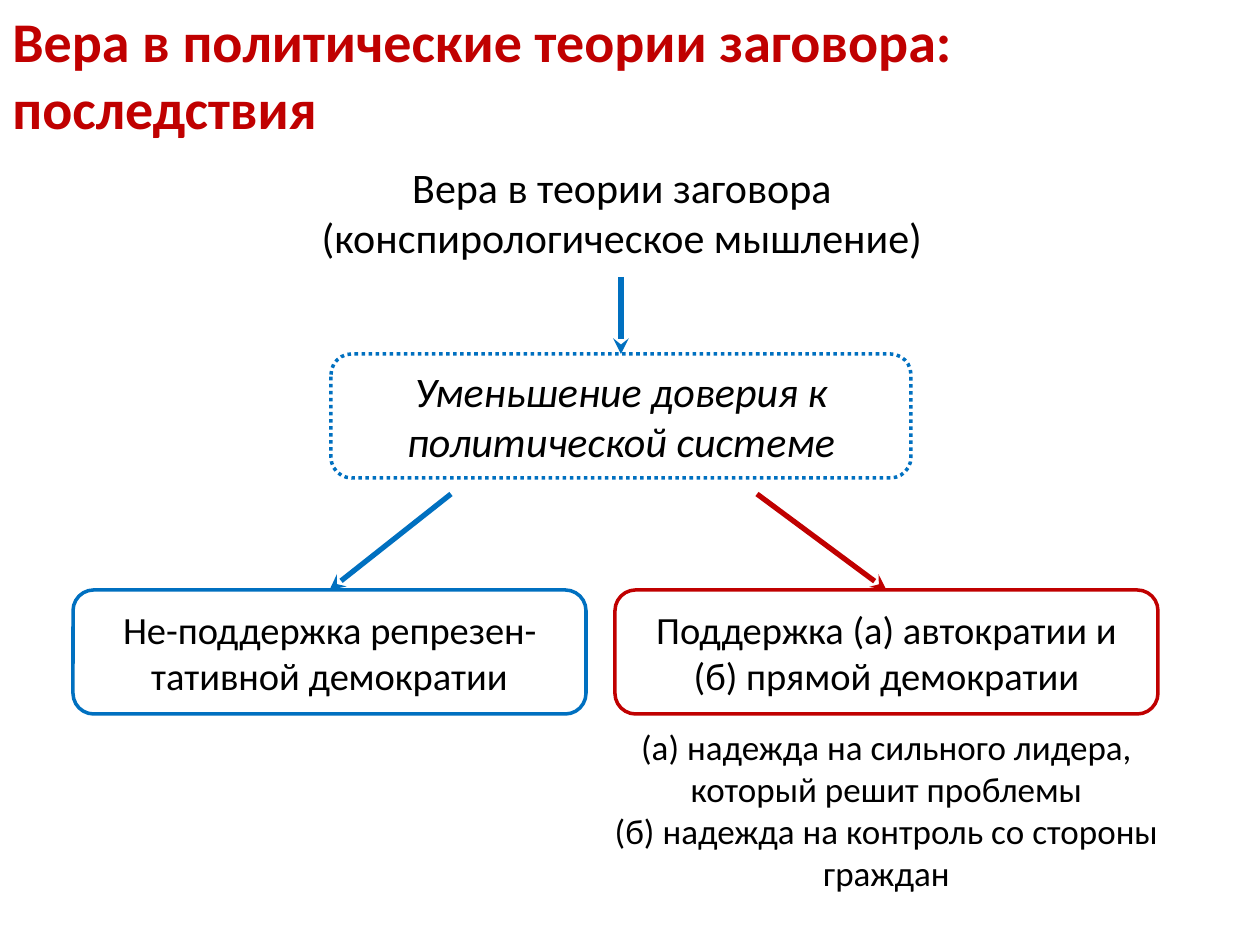
from dataclasses import dataclass

from lxml.etree import SubElement
from pptx import Presentation
from pptx.dml.color import RGBColor as Color
from pptx.enum.dml import MSO_LINE_DASH_STYLE as Dash
from pptx.enum.shapes import MSO_AUTO_SHAPE_TYPE as Shape, MSO_CONNECTOR_TYPE as Link
from pptx.enum.text import MSO_VERTICAL_ANCHOR as Anchor, PP_PARAGRAPH_ALIGNMENT as Align
from pptx.oxml.ns import qn
from pptx.util import Emu, Pt

EMU_PER_PX = 914400 / 126
TOP = 0


def px(length):
    return Emu(round(length * EMU_PER_PX))


@dataclass(frozen=True)
class Theme:
    font: str = "Calibri"
    ink: str = "000000"
    blue: str = "0070C0"
    red: str = "C00000"
    title: int = 32
    body: int = 24
    outcome: int = 22
    detail: int = 20
    outline: int = 2
    arrow: int = 3


class Painter:
    def __init__(self, page, theme):
        self.page = page
        self.theme = theme

    def add_span(self, para, text, size, color, bold=False, italic=False):
        span = para.add_run()
        span.text = text
        font = span.font
        font.name = self.theme.font
        font.size = Pt(size)
        font.bold = bold
        font.italic = italic
        font.color.rgb = Color.from_string(color)

    def title(self, area, text):
        box = self.page.shapes.add_textbox(*map(px, area))
        box.text_frame.word_wrap = True
        self.add_span(box.text_frame.paragraphs[0], text, self.theme.title, self.theme.red, bold=True)

    def block(self, area, lines, size, border=None, dash=None, italic=False):
        box = self.page.shapes.add_shape(Shape.ROUNDED_RECTANGLE, *map(px, area))
        box.shadow.inherit = False
        box.fill.background()
        if border:
            box.line.color.rgb = Color.from_string(border)
            box.line.width = Pt(self.theme.outline)
            box.line.dash_style = dash
        else:
            box.line.fill.background()
        frame = box.text_frame
        frame.word_wrap = True
        frame.vertical_anchor = Anchor.MIDDLE
        for index, line in enumerate(lines):
            para = frame.add_paragraph() if index else frame.paragraphs[0]
            para.alignment = Align.CENTER
            self.add_span(para, line, size, self.theme.ink, italic=italic)
        return box

    def arrow(self, left, top, target, color):
        start = px(left), px(top)
        link = self.page.shapes.add_connector(Link.STRAIGHT, *start, *start)
        link.end_connect(target, TOP)
        link.line.color.rgb = Color.from_string(color)
        link.line.width = Pt(self.theme.arrow)
        properties = link._element.spPr
        SubElement(properties.find(qn("a:ln")), qn("a:tailEnd"), type="stealth")
        SubElement(properties, qn("a:effectLst"))


def main():
    deck = Presentation()
    deck.slide_width = px(1260)
    deck.slide_height = px(945)
    page = deck.slides.add_slide(deck.slide_layouts[6])
    theme = Theme()
    painter = Painter(page, theme)
    height = 124
    outcome_top = 590

    painter.title((0, 0, 1260, 150), "Вера в политические теории заговора: последствия")
    painter.block((249, 150, 746, height),
                  ["Вера в теории заговора (конспирологическое мышление)"], theme.body)
    trust = painter.block((331, 354, 580, height), ["Уменьшение доверия к политической системе"],
                          theme.body, theme.blue, Dash.ROUND_DOT, italic=True)
    painter.arrow(621, 277, trust, theme.blue)

    outcomes = [
        (73, 513, 451, theme.blue, "Не-поддержка репрезен-тативной демократии"),
        (615, 543, 757, theme.red, "Поддержка (а) автократии и (б) прямой демократии"),
    ]
    for left, width, arrow_left, color, text in outcomes:
        outcome = painter.block((left, outcome_top, width, height), [text], theme.outcome, color)
        painter.arrow(arrow_left, 494, outcome, color)

    painter.block((586, outcome_top + height, 601, 192),
                  ["(а) надежда на сильного лидера, который решит проблемы",
                   "(б) надежда на контроль со стороны граждан"], theme.detail)
    deck.save("out.pptx")


if __name__ == "__main__":
    main()
